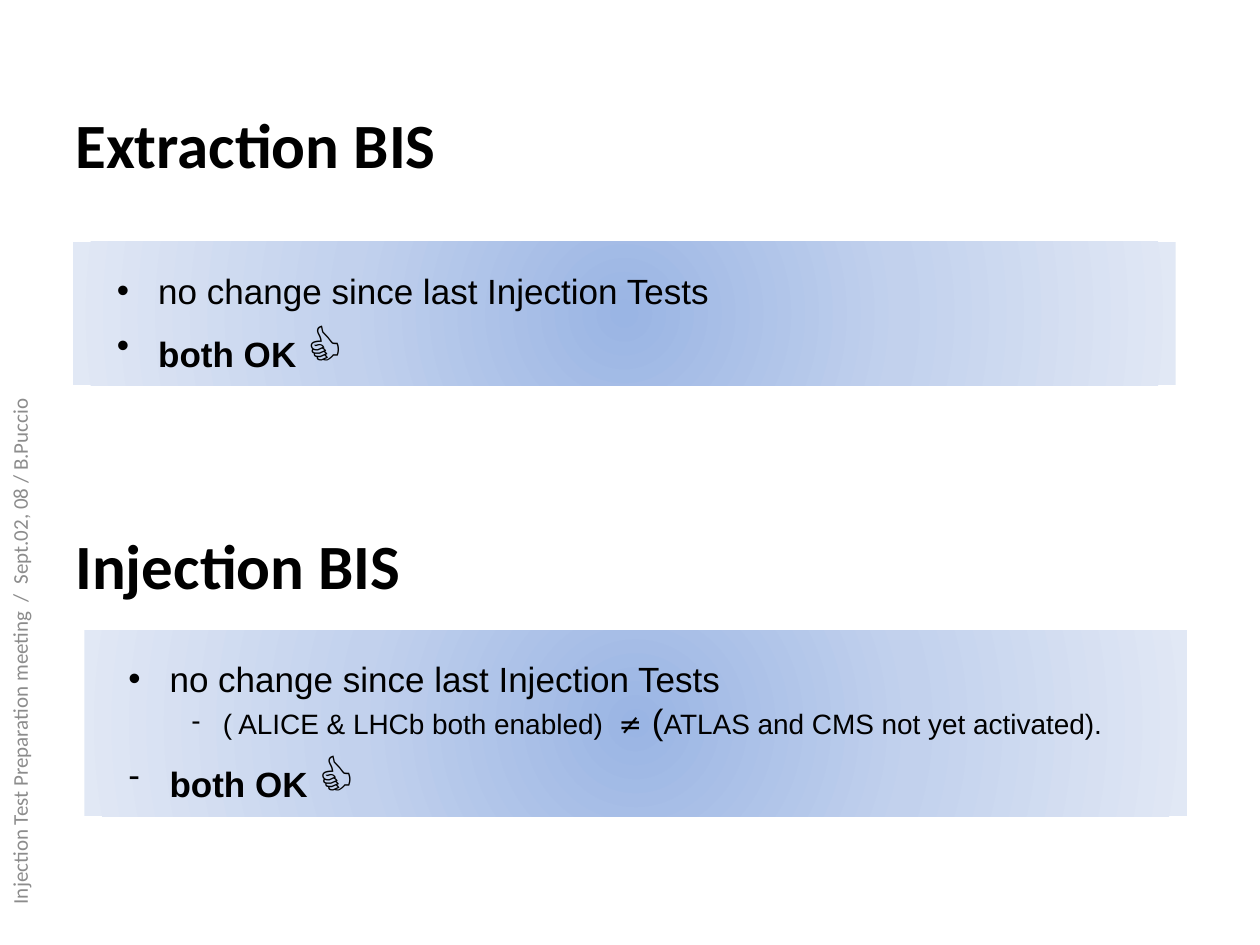
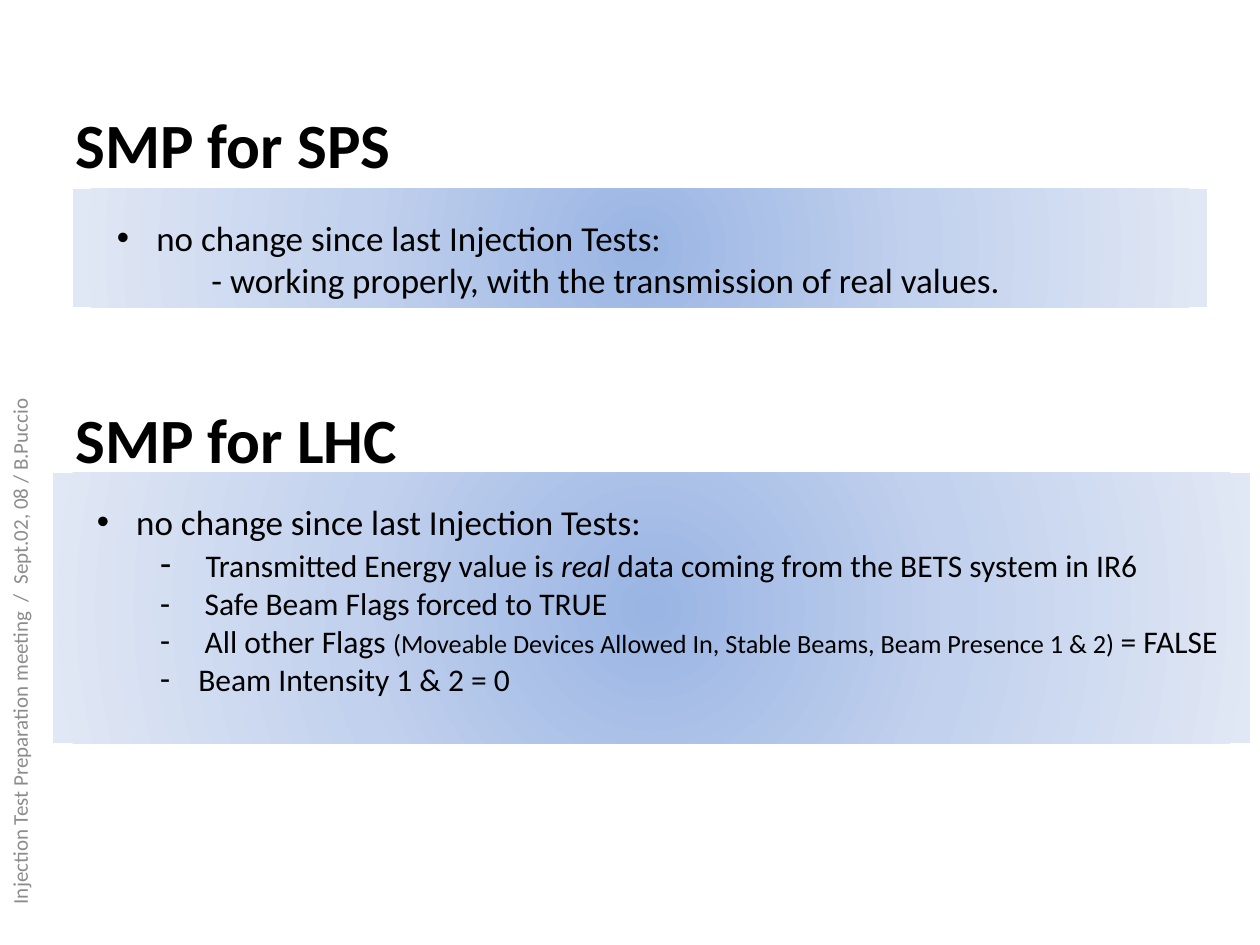
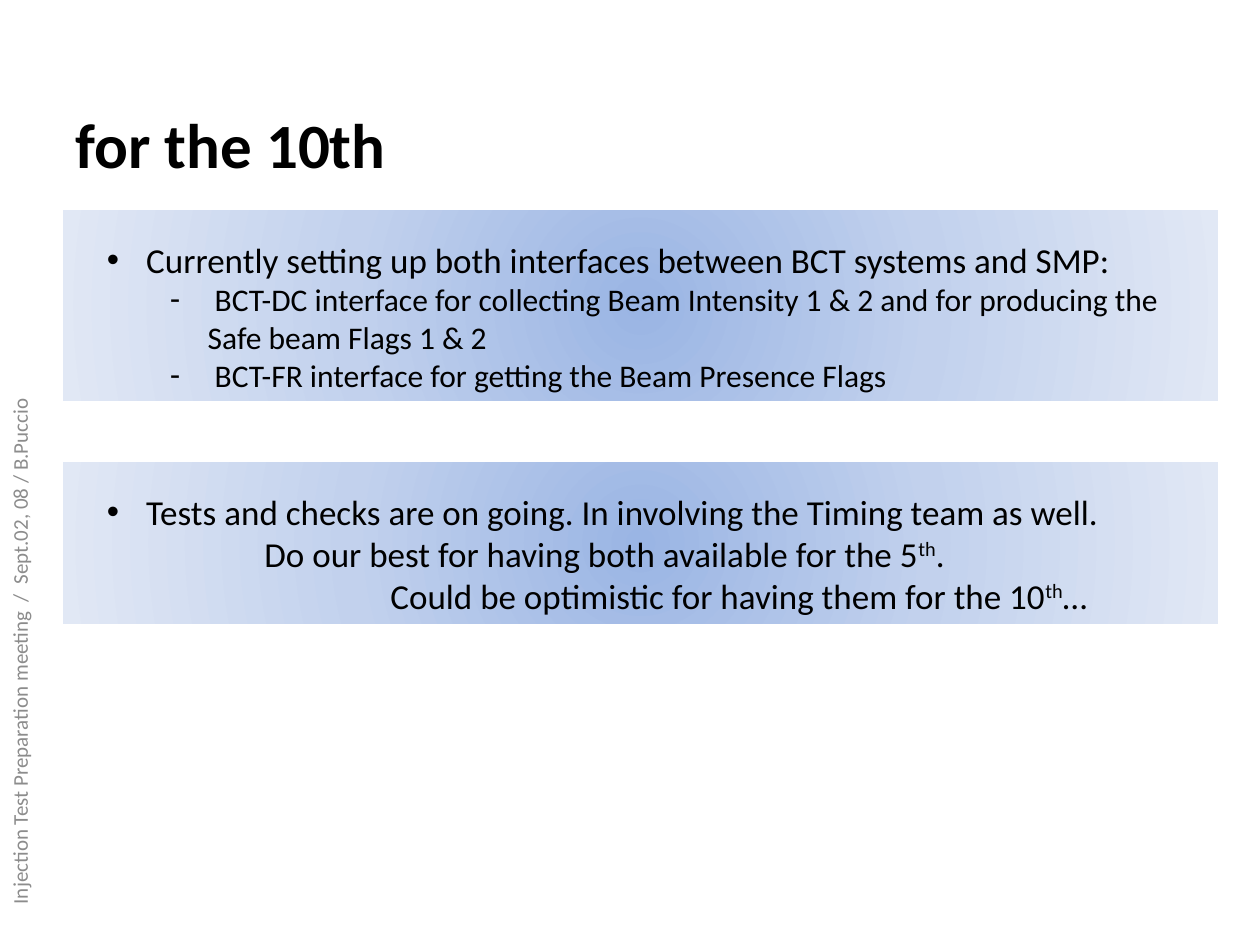
from pptx import Presentation
from pptx.dml.color import RGBColor
from pptx.enum.shapes import MSO_SHAPE
from pptx.enum.text import MSO_ANCHOR, PP_ALIGN
from pptx.oxml import parse_xml
from pptx.oxml.ns import nsdecls
from pptx.util import Inches, Pt

RECTANGLE = MSO_SHAPE.RECTANGLE
TOP, MIDDLE = MSO_ANCHOR.TOP, MSO_ANCHOR.MIDDLE
LEFT, CENTER = PP_ALIGN.LEFT, PP_ALIGN.CENTER

# Shared look
BLACK, GREY = "000000", "8C8C8C"
PANEL_STOPS = ((0, "9AB5E4"), (50, "C2D1ED"), (100, "E1E8F5"))
PANEL_GRADIENT = (
    f"<a:gradFill {nsdecls('a')} rotWithShape='1'><a:gsLst>"
    + "".join(f"<a:gs pos='{position * 1000}'><a:srgbClr val='{color}'/></a:gs>"
              for position, color in PANEL_STOPS)
    + "</a:gsLst><a:path path='circle'>"
      "<a:fillToRect l='50000' t='50000' r='50000' b='50000'/></a:path></a:gradFill>"
)
PANEL_TOP_INSET = 0.22
FOOTER = "Injection Test Preparation meeting  /  Sept.02, 08 / B.Puccio"

# Text positions inside a panel, in inches
POINT, DETAIL, DEEP_DETAIL = 0.5, 1.0, 1.05
POINT_BULLET, DETAIL_BULLET = 0.25, 0.75


def add_run(paragraph, text, size=20, font="Calibri", color=BLACK,
            bold=False, italic=False, raised=False):
    run = paragraph.add_run()
    run.text = text
    run.font.size = Pt(size)
    run.font.name = font
    run.font.bold = bold
    run.font.italic = italic
    run.font.color.rgb = RGBColor.from_string(color)
    if raised:
        run._r.get_or_add_rPr().set("baseline", "30000")


def add_label(slide, text, box, align=LEFT, rotation=0, **text_format):
    label = slide.shapes.add_textbox(*map(Inches, box))
    label.rotation = rotation
    label.text_frame.word_wrap = True
    label.text_frame.vertical_anchor = MIDDLE
    paragraph = label.text_frame.paragraphs[0]
    paragraph.alignment = align
    add_run(paragraph, text, **text_format)


# Content: a slide holds titles (top, width, text) and panels (box, lines);
# a line is (left, bullet, runs)
ARIAL = {"font": "Arial"}
ARIAL_BOLD = {"font": "Arial", "bold": True}
ARIAL_SMALL = {"font": "Arial", "size": 16}
THUMB = {"font": "Arial", "size": 32}
DETAIL_TEXT = {"size": 18}
RAISED = {"raised": True}

no_change = (POINT, "•", [(" no change since last Injection Tests", ARIAL)])
no_change_colon = (POINT, "•", [(" no change since last Injection Tests:", {})])
both_ok = [(" ", ARIAL), ("both OK ", ARIAL_BOLD), ("👍", THUMB)]

slides = [
    {
        "titles": [(0.83, 8.83, "Extraction BIS"), (4.17, 8.92, "Injection BIS")],
        "panels": [
            ((0.58, 1.92, 8.75, 1.14), [no_change, (POINT, "•", both_ok)]),
            ((0.67, 5, 8.75, 1.48), [
                no_change,
                (DETAIL, "-", [
                    ("( ALICE & LHCb both enabled)  ", ARIAL_SMALL),
                    ("≠", {"font": "DejaVu Sans", "size": 16}),
                    (" (", ARIAL),
                    ("ATLAS and CMS not yet activated).", ARIAL_SMALL),
                ]),
                (POINT, "-", both_ok),
            ]),
        ],
    },
    {
        "titles": [(0.83, 8.83, "SMP for SPS"), (3.17, 8.92, "SMP for LHC")],
        "panels": [
            ((0.58, 1.5, 9, 0.94), [
                no_change_colon,
                (DETAIL, None,
                 [("- working properly, with the transmission of real values.", {})]),
            ]),
            ((0.42, 3.75, 9.5, 2.15), [
                no_change_colon,
                (DEEP_DETAIL, "-", [
                    (" ", {}),
                    ("Transmitted Energy value is ", DETAIL_TEXT),
                    ("real", {"size": 18, "italic": True}),
                    (" data coming from the BETS system in IR6", DETAIL_TEXT),
                ]),
                (DEEP_DETAIL, "-", [(" Safe Beam Flags forced to TRUE", DETAIL_TEXT)]),
                (DEEP_DETAIL, "-", [
                    (" All other Flags ", DETAIL_TEXT),
                    ("(Moveable Devices Allowed In, Stable Beams, Beam Presence 1 & 2)",
                     {"size": 15}),
                    (" ", {"size": 14}),
                    ("= FALSE", DETAIL_TEXT),
                ]),
                (DETAIL, "-", [(" Beam Intensity 1 & 2 = 0", DETAIL_TEXT)]),
            ]),
        ],
    },
    {
        "titles": [(0.83, 8.83, "for the 10th")],
        "panels": [
            ((0.5, 1.67, 9.17, 1.51), [
                (POINT, "•", [(" Currently setting up both interfaces between "
                               "BCT systems and SMP:", {})]),
                (DEEP_DETAIL, "-", [(" BCT-DC interface for collecting Beam Intensity 1 & 2 "
                                     "and for producing the Safe beam Flags 1 & 2",
                                     DETAIL_TEXT)]),
                (DEEP_DETAIL, "-", [(" BCT-FR interface for getting the Beam Presence Flags",
                                     DETAIL_TEXT)]),
            ]),
            ((0.5, 3.67, 9.17, 1.28), [
                (POINT, "•", [(" Tests and checks are on going. In involving the "
                               "Timing team as well.", {})]),
                (POINT + 1, None, [("Do our best for having both available for the 5", {}),
                                   ("th", RAISED), (".", {})]),
                (POINT + 2, None, [("Could be optimistic for having them for the 10", {}),
                                   ("th", RAISED), ("…", {})]),
            ]),
        ],
    },
]

presentation = Presentation()
presentation.slide_width = Inches(10)
presentation.slide_height = Inches(7.5)
blank_layout = presentation.slide_layouts[6]

for content in slides:
    slide = presentation.slides.add_slide(blank_layout)

    # Titles
    for top, width, title in content["titles"]:
        add_label(slide, title, (0.5, top, width, 0.62), size=36, bold=True)

    # Gradient panels with bulleted lines
    for box, lines in content["panels"]:
        panel = slide.shapes.add_shape(RECTANGLE, *map(Inches, box))
        panel.shadow.inherit = False
        panel.line.fill.background()
        panel._element.spPr.insert(2, parse_xml(PANEL_GRADIENT))
        frame = panel.text_frame
        frame.word_wrap = True
        frame.vertical_anchor = TOP
        frame.margin_top = Inches(PANEL_TOP_INSET)

        for index, (left, bullet, runs) in enumerate(lines):
            paragraph = frame.paragraphs[0] if index == 0 else frame.add_paragraph()
            paragraph.alignment = LEFT
            properties = paragraph._p.get_or_add_pPr()
            properties.set("marL", str(Inches(left)))
            if bullet:
                bullet_left = POINT_BULLET if left == POINT else DETAIL_BULLET
                properties.set("indent", str(Inches(bullet_left - left)))
                properties.append(parse_xml(
                    f"<a:buFont {nsdecls('a')} typeface='Arial'/>"))
                properties.append(parse_xml(
                    f"<a:buChar {nsdecls('a')} char='{bullet}'/>"))
            for text, text_format in runs:
                add_run(paragraph, text, **text_format)

    # Footer along the left edge
    add_label(slide, FOOTER, (-2.18, 5.02, 4.67, 0.3), align=CENTER,
              rotation=270, size=12, color=GREY)

presentation.save("out.pptx")
